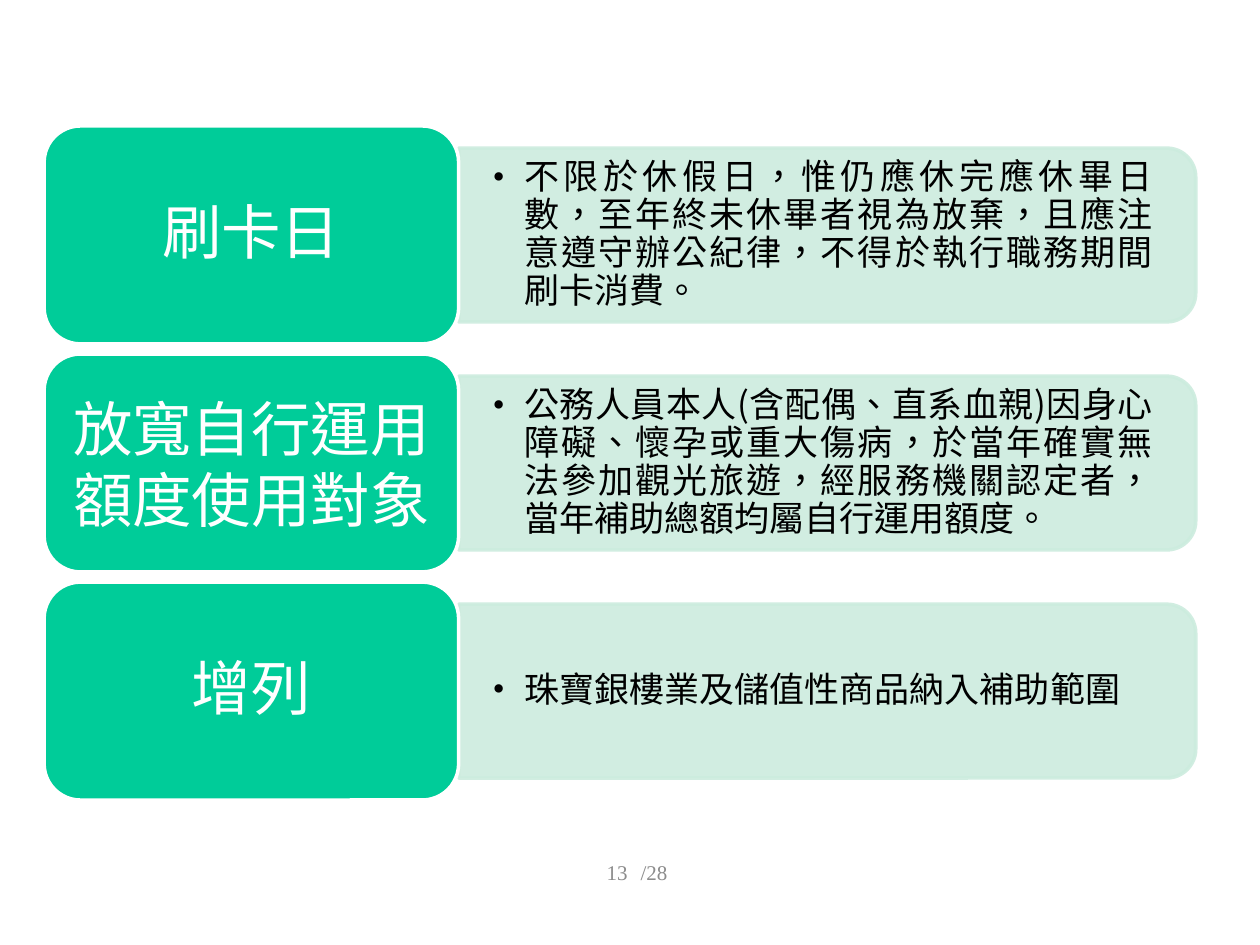
"""Build a slide of three rule headings, each with a bulleted explanation."""
from lxml.etree import SubElement
from pptx import Presentation
from pptx.dml.color import RGBColor
from pptx.enum.shapes import MSO_SHAPE as Preset
from pptx.enum.text import MSO_ANCHOR as Anchor, PP_ALIGN as Align
from pptx.oxml.ns import qn
from pptx.util import Inches, Pt

ROWS = [
    ("刷卡日", 0.9,
     "不限於休假日，惟仍應休完應休畢日數，至年終未休畢者視為放棄，且應注意遵守辦公紀律，不得於執行職務期間刷卡消費。"),
    ("放寬自行運用額度使用對象", 1.0,
     "公務人員本人(含配偶、直系血親)因身心障礙、懷孕或重大傷病，於當年確實無法參加觀光旅遊，經服務機關認定者，當年補助總額均屬自行運用額度。"),
    ("增列", 0.9, "珠寶銀樓業及儲值性商品納入補助範圍"),
]
PAGE_NUMBER = [
    ("13", (2.83, 6.72, 2.25, 0.4), Align.RIGHT),
    ("/28", (3.5, 6.72, 3.38, 0.4), Align.CENTER),
]
COLORS = {"heading": "00CC99", "panel": "CCECDE", "white": "FFFFFF",
          "black": "000000", "gray": "8C8C8C"}
CJK, LATIN = "Noto Sans CJK SC", "Times New Roman"
WIDTH, HEIGHT = 10, 7.5
LEFT, TOP, PITCH = 0.35, 1, 1.81
HEADING_WIDTH, HEADING_HEIGHT = 3.29, 1.73
PANEL_WIDTH, PANEL_HEIGHT = 5.85, 1.38
TEXT_WIDTH, TEXT_HEIGHT = 5.78, 1.25
INSET = 0.08


def color(name):
    return RGBColor.from_string(COLORS[name])


def add_block(slide, preset, box, fill, line, rotation=0, opacity=None):
    shape = slide.shapes.add_shape(preset, *map(Inches, box))
    shape.shadow.inherit = False
    shape.rotation = rotation
    shape.fill.solid()
    shape.fill.fore_color.rgb = color(fill)
    shape.line.color.rgb = color(line)
    shape.line.width = Pt(2)
    if opacity is not None:
        for element in shape._element.spPr.iter(qn("a:srgbClr")):
            SubElement(element, qn("a:alpha"), val=str(opacity * 1000))


def add_text(slide, text, box, size, fill, font_name=CJK, align=Align.CENTER,
             insets=(0.1, 0.05), spacing=None, bullet=False):
    frame = slide.shapes.add_textbox(*map(Inches, box)).text_frame
    frame.word_wrap = True
    frame.vertical_anchor = Anchor.MIDDLE
    frame.margin_left = frame.margin_right = Inches(insets[0])
    frame.margin_top = frame.margin_bottom = Inches(insets[1])
    paragraph = frame.paragraphs[0]
    properties = paragraph._p.get_or_add_pPr()
    properties.set("hangingPunct", "0")
    if bullet:
        paragraph.level = 1
        properties.set("marL", str(Inches(0.25)))
        properties.set("indent", str(-Inches(0.25)))
        SubElement(properties, qn("a:buFont"), typeface=LATIN)
        SubElement(properties, qn("a:buChar"), char="•")
    paragraph.alignment = align
    if spacing:
        paragraph.line_spacing = spacing
    run = paragraph.add_run()
    run.text = text
    run.font.size = Pt(size)
    run.font.color.rgb = color(fill)
    run.font.name = font_name
    run_properties = run._r.get_or_add_rPr()
    run_properties.set("lang", "zh-TW")
    SubElement(run_properties, qn("a:ea"), typeface=font_name)


def add_row(slide, top, heading, spacing, detail):
    middle = top + HEADING_HEIGHT / 2
    panel_left = LEFT + HEADING_WIDTH
    upright = (panel_left + (PANEL_WIDTH - PANEL_HEIGHT) / 2,
               middle - PANEL_WIDTH / 2, PANEL_HEIGHT, PANEL_WIDTH)
    add_block(slide, Preset.ROUND_2_SAME_RECTANGLE, upright, "panel", "panel",
              rotation=90, opacity=90)
    add_text(slide, detail,
             (panel_left, middle - TEXT_HEIGHT / 2, TEXT_WIDTH, TEXT_HEIGHT),
             20, "black", align=Align.JUSTIFY, insets=(0.27, 0.14),
             spacing=0.9, bullet=True)
    add_block(slide, Preset.ROUNDED_RECTANGLE,
              (LEFT, top, HEADING_WIDTH, HEADING_HEIGHT), "heading", "white")
    add_text(slide, heading,
             (LEFT + INSET, top + INSET,
              HEADING_WIDTH - 2 * INSET, HEADING_HEIGHT - 2 * INSET),
             34, "white", insets=(0.14, 0.07), spacing=spacing)


def main():
    presentation = Presentation()
    presentation.slide_width = Inches(WIDTH)
    presentation.slide_height = Inches(HEIGHT)
    slide = presentation.slides.add_slide(presentation.slide_layouts[6])
    for index, row in enumerate(ROWS):
        add_row(slide, TOP + index * PITCH, *row)
    for text, box, align in PAGE_NUMBER:
        add_text(slide, text, box, 12, "gray", font_name=LATIN, align=align)
    presentation.save("out.pptx")


if __name__ == "__main__":
    main()
